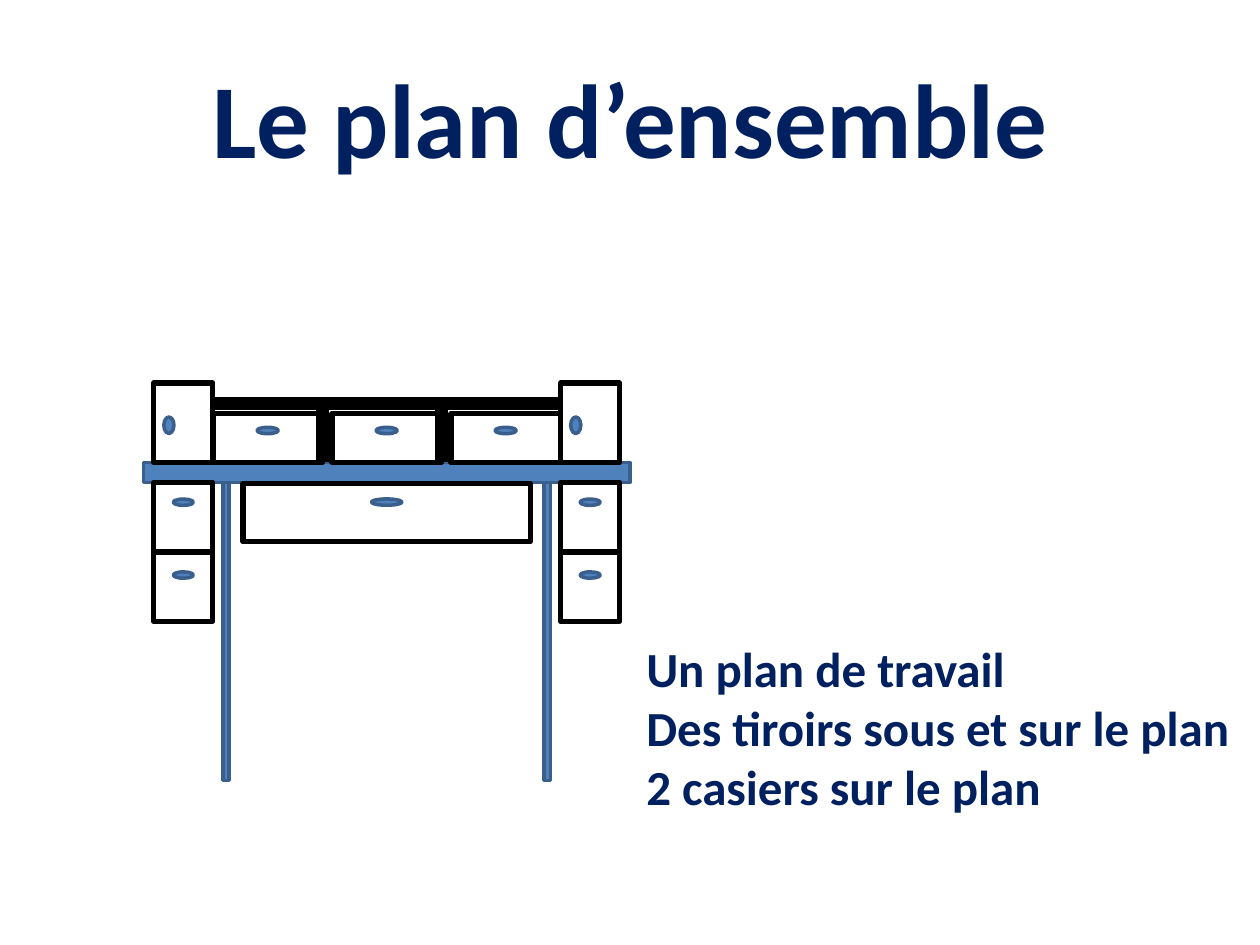
from dataclasses import dataclass

from lxml.etree import SubElement
from pptx import Presentation
from pptx.dml.color import RGBColor
from pptx.enum.shapes import MSO_CONNECTOR, MSO_SHAPE
from pptx.enum.text import MSO_ANCHOR, MSO_AUTO_SIZE, PP_ALIGN
from pptx.oxml.ns import qn
from pptx.util import Pt


@dataclass(frozen=True)
class Theme:
    """Colours, font, type sizes and line widths of the slide."""

    navy: RGBColor = RGBColor(0x00, 0x20, 0x60)
    blue: RGBColor = RGBColor(0x4F, 0x81, 0xBD)
    blue_edge: RGBColor = RGBColor(0x3A, 0x5F, 0x8C)
    black: RGBColor = RGBColor(0, 0, 0)
    font: str = "Calibri"
    title_size: float = 60
    list_size: float = 28
    part_line: float = 2
    frame_line: float = 3
    board_line: float = 7.5


THEME = Theme()


def add_text(slide, box, lines, size, align=PP_ALIGN.LEFT, anchor=MSO_ANCHOR.TOP, wrap=True):
    """Place bold navy lines of text, one paragraph each, in a box."""
    shape = slide.shapes.add_textbox(*map(Pt, box))
    frame = shape.text_frame
    frame.word_wrap = wrap
    frame.auto_size = MSO_AUTO_SIZE.NONE if wrap else MSO_AUTO_SIZE.SHAPE_TO_FIT_TEXT
    frame.vertical_anchor = anchor
    frame.text = "\n".join(lines)
    for paragraph in frame.paragraphs:
        paragraph.alignment = align
        for run in paragraph.runs:
            run.font.name = THEME.font
            run.font.size = Pt(size)
            run.font.bold = True
            run.font.color.rgb = THEME.navy


def add_solid(shapes, box, kind=MSO_SHAPE.RECTANGLE):
    """Draw a blue part of the desk."""
    shape = shapes.add_shape(kind, *map(Pt, box))
    shape.shadow.inherit = False
    shape.fill.solid()
    shape.fill.fore_color.rgb = THEME.blue
    shape.line.color.rgb = THEME.blue_edge
    shape.line.width = Pt(THEME.part_line)
    return shape


def add_frame(shapes, box):
    """Draw the empty black outline of a drawer or locker."""
    shape = shapes.add_shape(MSO_SHAPE.RECTANGLE, *map(Pt, box))
    shape.shadow.inherit = False
    shape.fill.background()
    shape.line.color.rgb = THEME.black
    shape.line.width = Pt(THEME.frame_line)
    return shape


def add_board(shapes, start, end, width):
    """Draw a straight black line between two points."""
    line = shapes.add_connector(MSO_CONNECTOR.STRAIGHT, *map(Pt, (*start, *end)))
    line.line.color.rgb = THEME.black
    line.line.width = Pt(width)
    SubElement(line._element.spPr, qn("a:effectLst"))
    return line


def add_handle(shapes, box, drop, width):
    """Centre a flat handle across a box, at a drop below its top."""
    left, top, box_width, _ = box
    handle_box = (left + (box_width - width) / 2, top + drop, width, 3.6)
    add_solid(shapes, handle_box, MSO_SHAPE.OVAL)


def add_pedestal(slide, box):
    """Draw a hanging unit of two drawers."""
    left, top, width, height = box
    shapes = slide.shapes.add_group_shape().shapes
    outline = add_frame(shapes, box)
    middle = top + height / 2
    divider = add_board(shapes, (left + width, middle), (left, middle), THEME.frame_line)
    divider.begin_connect(outline, 3)
    divider.end_connect(outline, 1)
    for drop in (9.4, 51):
        add_handle(shapes, box, drop, 11.5)


def add_locker(slide, box):
    """Draw a locker with an upright knob near its left side."""
    left, top, _, _ = box
    shapes = slide.shapes.add_group_shape().shapes
    add_frame(shapes, box)
    add_solid(shapes, (left + 5.8, top + 19.4, 5.8, 9.4), MSO_SHAPE.OVAL)


def add_drawer(shapes, box, drop, handle_width):
    """Draw a single drawer with its handle."""
    add_frame(shapes, box)
    add_handle(shapes, box, drop, handle_width)


def add_drawer_row(slide, box):
    """Draw three drawers, the two uprights between them and the rail above."""
    left, top, width, height = box
    drawer_width, drawer_height = 62.6, 28
    step = (width - drawer_width) / 2
    bottom = top + height
    for column in range(3):
        drawer = (left + column * step, bottom - drawer_height, drawer_width, drawer_height)
        add_drawer(slide.shapes.add_group_shape().shapes, drawer, 7.9, 12.2)
    for column in range(2):
        x = left + column * step + drawer_width
        add_board(slide.shapes, (x, top), (x, bottom), THEME.board_line)
    add_board(slide.shapes, (left, top), (left + width, top), THEME.board_line)


def add_desk(slide, box):
    """Draw the desk: worktop, legs, side units and drawers."""
    left, top, width, height = box
    worktop = top + 45.4
    underside = worktop + 11.5
    side_width, overhang, leg_inset, leg_width = 33.9, 5.8, 45.4, 3.6
    sides = (left + width - overhang - side_width, left + overhang)

    add_solid(slide.shapes, (left, worktop, width, underside - worktop))
    for x in (left + leg_inset, left + width - leg_inset - leg_width):
        add_solid(slide.shapes, (x, underside, leg_width, top + height - underside))
    for x in sides:
        add_pedestal(slide, (x, underside, side_width, 79.2))
    for x in sides:
        add_locker(slide, (x, top, side_width, worktop - top))

    wide = 164.2
    wide_box = (left + (width - wide) / 2, underside + 0.7, wide, 33.1)
    add_drawer(slide.shapes, wide_box, 8.6, 17.3)
    inner_left = left + overhang + side_width
    inner_width = width - 2 * (overhang + side_width)
    add_drawer_row(slide, (inner_left, top + 11.5, inner_width, worktop - top - 11.5))


def add_title(slide, box):
    """Place the centred slide title."""
    add_text(slide, box, ["Le plan d’ensemble"], THEME.title_size,
             align=PP_ALIGN.CENTER, anchor=MSO_ANCHOR.MIDDLE)


def add_parts_list(slide, box):
    """Place the list of the parts of the desk."""
    lines = ["Un plan de travail", "Des tiroirs sous et sur le plan", "2 casiers sur le plan"]
    add_text(slide, box, lines, THEME.list_size, wrap=False)


def main():
    """Build and save the slide."""
    presentation = Presentation()
    presentation.slide_width, presentation.slide_height = Pt(720), Pt(540)
    slide = presentation.slides.add_slide(presentation.slide_layouts[6])
    add_title(slide, (36, 21.6, 648, 90))
    add_desk(slide, (82, 218.9, 278, 227))
    add_parts_list(slide, (362.2, 361.4, 351.4, 108.7))
    presentation.save("out.pptx")


if __name__ == "__main__":
    main()
